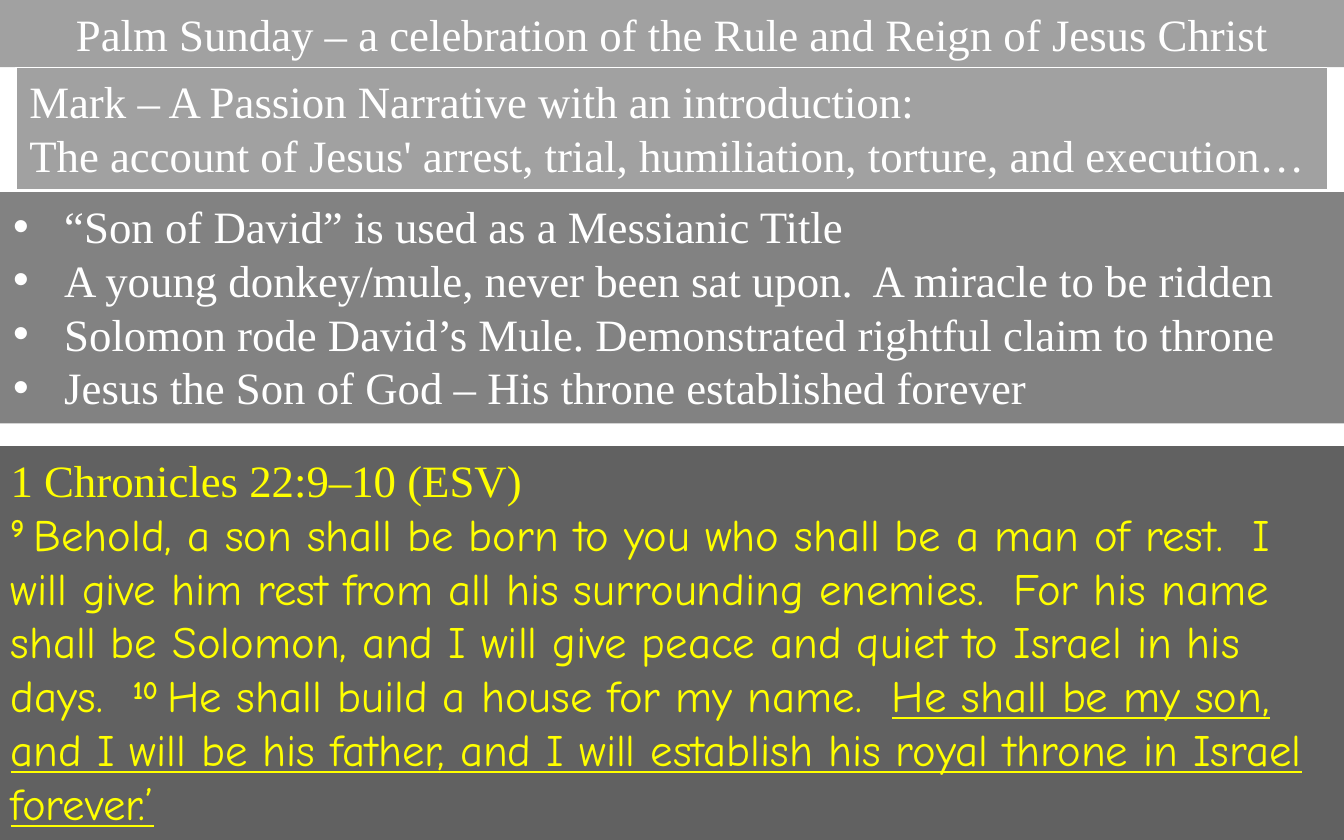
"""Build the Palm Sunday slide: a title, a Mark summary, four points and a reading."""
from dataclasses import dataclass

import lxml.etree
import pptx
import pptx.dml.color
import pptx.enum.shapes
import pptx.enum.text
import pptx.oxml.ns
import pptx.util
from pptx.util import Inches

COLORS = {"panel": "000000", "text": "FFFFFF", "scripture": "FFFF00"}
SERIF = "Times New Roman"
HAND = "Comic Neue"


@dataclass
class Span:
    text: str
    font: str = SERIF
    verse_number: bool = False
    underline: bool = False


@dataclass
class Panel:
    left: float
    top: float
    width: float
    height: float
    opacity: int
    paragraphs: list[list[Span]]
    color: str = "text"
    bulleted: bool = False
    outlined: bool = False


def rgb(name: str) -> pptx.dml.color.RGBColor:
    """Return a named colour."""
    return pptx.dml.color.RGBColor.from_string(COLORS[name])


def add_bullet(paragraph) -> None:
    """Give a paragraph a round bullet with a hanging indent."""
    properties = paragraph._p.get_or_add_pPr()
    properties.set("marL", str(Inches(0.38)))
    properties.set("indent", str(-Inches(0.38)))
    tag = pptx.oxml.ns.qn
    lxml.etree.SubElement(properties, tag("a:buFont")).set("typeface", "Arial")
    lxml.etree.SubElement(properties, tag("a:buChar")).set("char", "•")


def write_text(frame, paragraphs: list[list[Span]], *, color: str = "text",
               bulleted: bool = False, align=pptx.enum.text.PP_ALIGN.LEFT) -> None:
    """Fill a text frame with formatted paragraphs."""
    frame.word_wrap = True
    frame.auto_size = pptx.enum.text.MSO_AUTO_SIZE.NONE
    frame.vertical_anchor = pptx.enum.text.MSO_ANCHOR.TOP
    frame.margin_left = frame.margin_right = Inches(0.1)
    frame.margin_top = frame.margin_bottom = Inches(0.05)
    for index, spans in enumerate(paragraphs):
        paragraph = frame.add_paragraph() if index else frame.paragraphs[0]
        paragraph.alignment = align
        if bulleted:
            add_bullet(paragraph)
        for span in spans:
            run = paragraph.add_run()
            run.text = span.text
            run.font.name = span.font
            run.font.size = pptx.util.Pt(24)
            run.font.color.rgb = rgb(color)
            run.font.bold = span.verse_number
            run.font.underline = span.underline
            if span.verse_number:
                run._r.get_or_add_rPr().set("baseline", "30000")


def fill_translucent(shape, opacity: int) -> None:
    """Fill a shape with the panel colour at a percentage of opacity."""
    shape.fill.solid()
    shape.fill.fore_color.rgb = rgb("panel")
    tag = pptx.oxml.ns.qn
    fill_color = shape._element.spPr.find(f".//{tag('a:solidFill')}/{tag('a:srgbClr')}")
    lxml.etree.SubElement(fill_color, tag("a:alpha")).set("val", str(opacity * 1000))


def add_title(slide, text: str) -> None:
    """Place the title as a band across the top."""
    title = slide.shapes.title
    title.left, title.top = Inches(0), Inches(0)
    title.width, title.height = Inches(10), Inches(0.5)
    fill_translucent(title, 37)
    write_text(title.text_frame, [[Span(text)]], align=pptx.enum.text.PP_ALIGN.CENTER)


def add_panel(slide, panel: Panel) -> None:
    """Draw one translucent text panel."""
    shape = slide.shapes.add_shape(
        pptx.enum.shapes.MSO_SHAPE.RECTANGLE, Inches(panel.left), Inches(panel.top),
        Inches(panel.width), Inches(panel.height))
    shape.shadow.inherit = False
    fill_translucent(shape, panel.opacity)
    if panel.outlined:
        shape.line.color.rgb = rgb("text")
        shape.line.width = pptx.util.Pt(0.75)
    else:
        shape.line.fill.background()
    write_text(shape.text_frame, panel.paragraphs, color=panel.color, bulleted=panel.bulleted)


MARK = [
    [Span("Mark – A Passion Narrative with an introduction:")],
    [Span("The account of Jesus' arrest, trial, humiliation, torture, and execution…")],
]
POINTS = [
    [Span("“Son of David” is used as a Messianic Title")],
    [Span("A young donkey/mule, never been sat upon.  A miracle to be ridden")],
    [Span("Solomon rode David’s Mule. Demonstrated rightful claim to throne")],
    [Span("Jesus the Son of God – His throne established forever")],
]
READING = [
    [Span("1 Chronicles 22:9–10 (ESV)")],
    [
        Span("9 ", HAND, verse_number=True),
        Span("Behold, a son shall be born to you who shall be a man of rest.  "
             "I will give him rest from all his surrounding enemies.  For his name shall be "
             "Solomon, and I will give peace and quiet to Israel in his days.  ", HAND),
        Span("10 ", HAND, verse_number=True),
        Span("He shall build a house for my name.  ", HAND),
        Span("He shall be my son, and I will be his father, and I will establish "
             "his royal throne in Israel forever.’", HAND, underline=True),
    ],
]
PANELS = [
    Panel(0.12, 0.5, 9.76, 0.91, 37, MARK, outlined=True),
    Panel(0, 1.43, 10, 1.72, 49, POINTS, bulleted=True),
    Panel(-0.02, 3.32, 10.02, 2.93, 62, READING, color="scripture"),
]


def main() -> None:
    """Build and save the slide."""
    deck = pptx.Presentation()
    deck.slide_width, deck.slide_height = Inches(10), Inches(6.25)
    slide = deck.slides.add_slide(deck.slide_layouts.get_by_name("Title Only"))
    add_title(slide, "Palm Sunday – a celebration of the Rule and Reign of Jesus Christ")
    for panel in PANELS:
        add_panel(slide, panel)
    deck.save("out.pptx")


if __name__ == "__main__":
    main()
